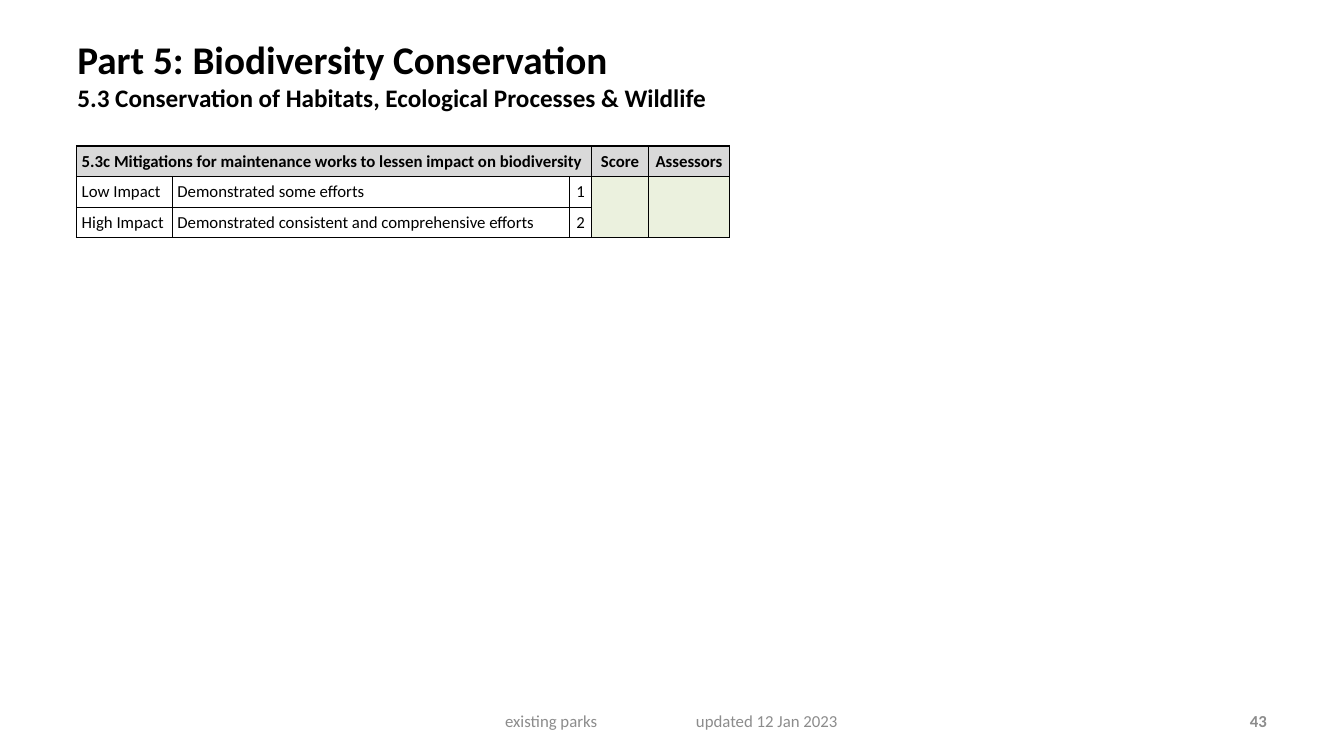
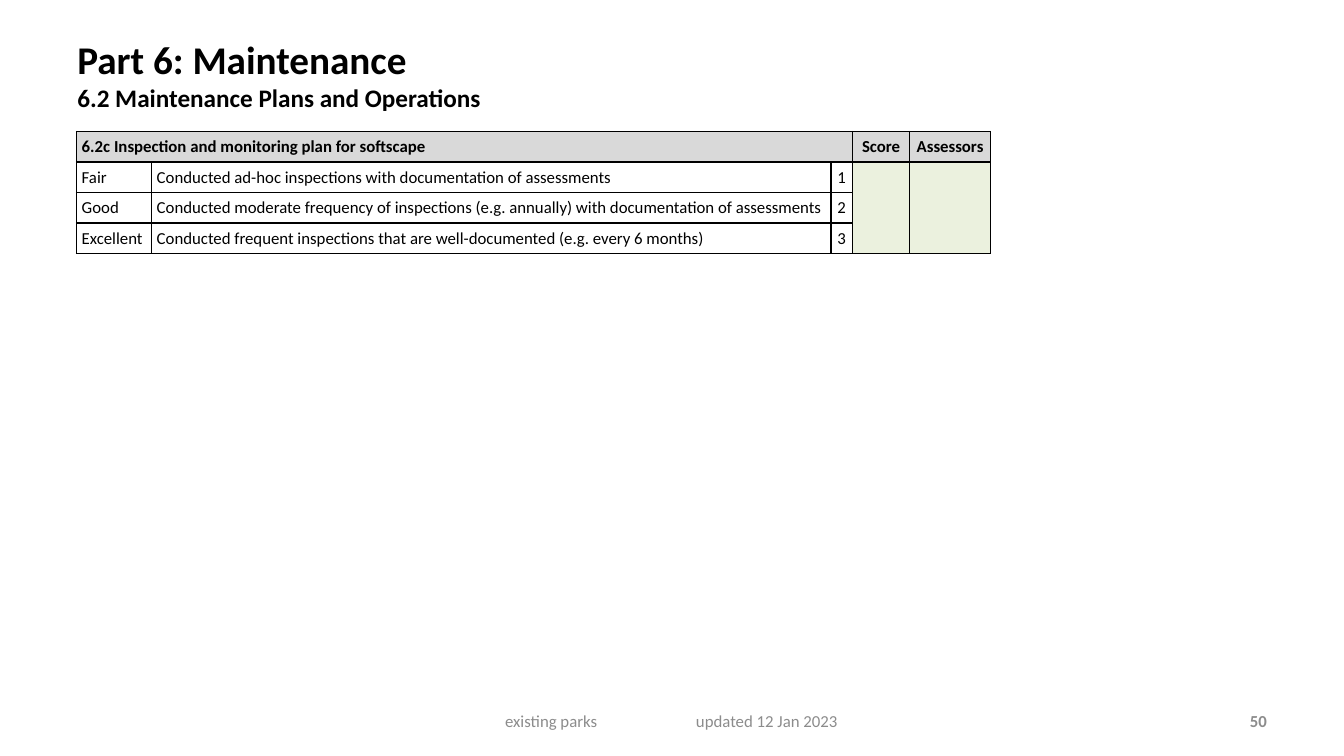
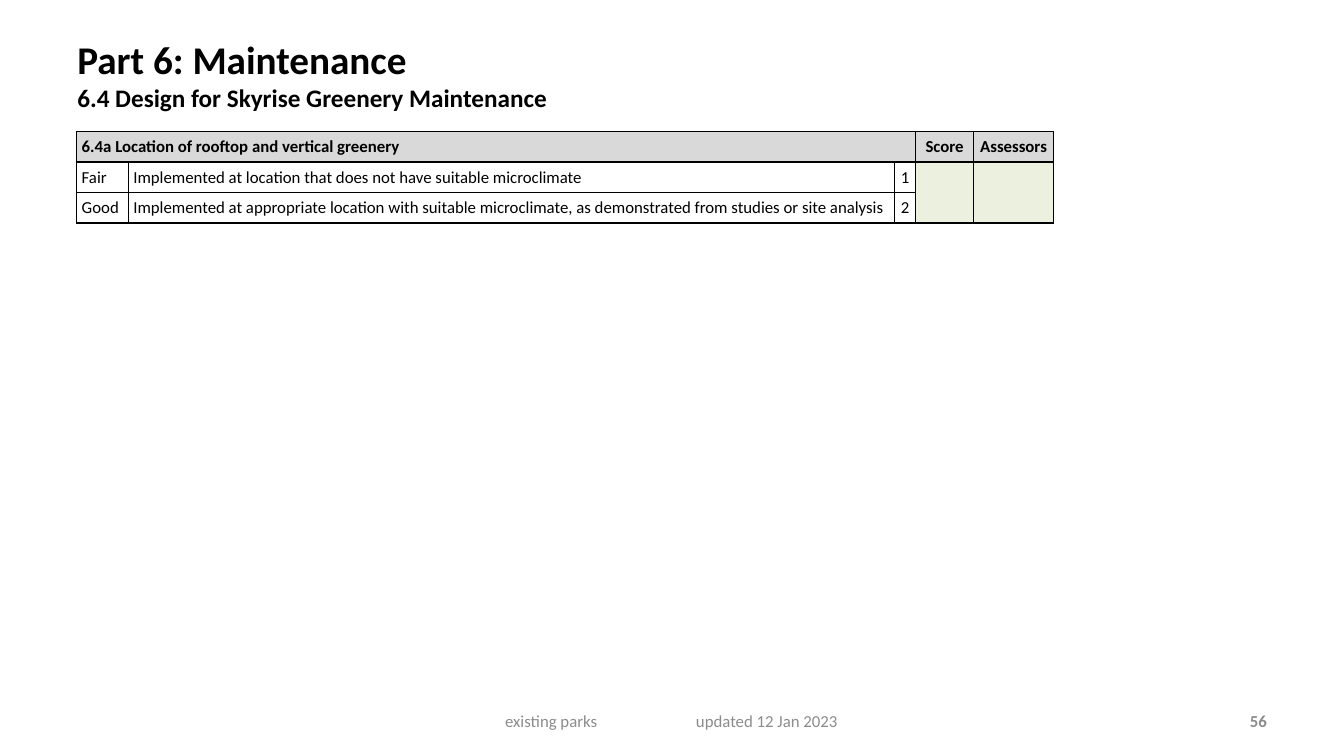
from lxml.etree import SubElement
from pptx import Presentation
from pptx.dml.color import RGBColor
from pptx.enum.text import MSO_ANCHOR, PP_ALIGN
from pptx.oxml import parse_xml
from pptx.oxml.ns import nsdecls, qn
from pptx.util import Cm, Pt

# Content: title, subtitle, page, table top, first two column widths, heading, levels
SLIDES = [
    dict(title="Part 5: Biodiversity Conservation",
         sub="5.3 Conservation of Habitats, Ecological Processes & Wildlife",
         page="43", top=3.68, cols=(2.41, 10.02),
         head="5.3c Mitigations for maintenance works to lessen impact on biodiversity",
         rows=[("Low Impact", "Demonstrated some efforts"),
               ("High Impact", "Demonstrated consistent and comprehensive efforts")]),
    dict(title="Part 6: Maintenance",
         sub="6.2 Maintenance Plans and Operations",
         page="50", top=3.31, cols=(1.89, 17.12),
         head="6.2c Inspection and monitoring plan for softscape",
         rows=[("Fair", "Conducted ad-hoc inspections with documentation of assessments"),
               ("Good", "Conducted moderate frequency of inspections (e.g. annually) "
                        "with documentation of assessments"),
               ("Excellent", "Conducted frequent inspections that are well-documented "
                             "(e.g. every 6 months)")]),
    dict(title="Part 6: Maintenance",
         sub="6.4 Design for Skyrise Greenery Maintenance",
         page="56", top=3.31, cols=(1.3, 19.31),
         head="6.4a Location of rooftop and vertical greenery",
         rows=[("Fair", "Implemented at location that does not have suitable microclimate"),
               ("Good", "Implemented at appropriate location with suitable microclimate, "
                        "as demonstrated from studies or site analysis")]),
]
FOOTER = "existing parks\tupdated 12 Jan 2023"

# Shared style
COLORS = dict(text="000000", foot="8C8C8C", head="D9D9D9", entry="EBF1DE")
FONT = "Calibri"
LEFT, ROW, PAD = 1.93, 0.77, 0.13
SCORES = (0.54, 1.45, 2.03)
FOOT_TOP, FOOT_HIGH = 17.65, 1.02


def write(para, text, size=12, bold=False, color="text", align=PP_ALIGN.LEFT, tab=None):
    """Put formatted text in a paragraph."""
    para.alignment = align
    if tab:
        tabs = SubElement(para._p.get_or_add_pPr(), qn("a:tabLst"))
        SubElement(tabs, qn("a:tab"), pos=str(Cm(tab)), algn="l")
    if not text:
        SubElement(para._p, qn("a:endParaRPr"), sz=str(size * 100))
        return
    run = para.add_run()
    run.text = text
    run.font.name, run.font.size, run.font.bold = FONT, Pt(size), bold
    run.font.color.rgb = RGBColor.from_string(COLORS[color])


def add_box(slide, left, top, width, height, anchor=MSO_ANCHOR.MIDDLE):
    frame = slide.shapes.add_textbox(Cm(left), Cm(top), Cm(width), Cm(height)).text_frame
    frame.word_wrap = True
    frame.vertical_anchor = anchor
    return frame


def fill_cell(cell, text="", fill=None, **form):
    """Give a cell its borders, fill, margins and text."""
    props = cell._tc.get_or_add_tcPr()
    for side in "LRTB":
        props.append(parse_xml(
            f'<a:ln{side} {nsdecls("a")} w="{Pt(1)}"><a:solidFill>'
            f'<a:srgbClr val="{COLORS["text"]}"/></a:solidFill></a:ln{side}>'))
    if fill:
        cell.fill.solid()
        cell.fill.fore_color.rgb = RGBColor.from_string(COLORS[fill])
    else:
        cell.fill.background()
    cell.margin_left = cell.margin_right = Cm(PAD)
    cell.margin_top = cell.margin_bottom = Cm(PAD)
    cell.vertical_anchor = MSO_ANCHOR.MIDDLE
    write(cell.text_frame.paragraphs[0], text, **form)


def add_rubric(slide, data):
    """Table of levels with cells for the scores."""
    widths = data["cols"] + SCORES
    count = len(data["rows"]) + 1
    table = slide.shapes.add_table(count, len(widths), Cm(LEFT), Cm(data["top"]),
                                   Cm(sum(widths)), Cm(ROW * count)).table
    table.horz_banding = False
    for col, width in zip(table.columns, widths):
        col.width = Cm(width)
    for row in table.rows:
        row.height = Cm(ROW)

    grid = [(data["head"], "", "", "Score", "Assessors")]
    grid += [(*level, str(mark), "", "") for mark, level in enumerate(data["rows"], 1)]
    for r, line in enumerate(grid):
        for c, text in enumerate(line):
            fill = "head" if r == 0 else "entry" if c > 2 else None
            fill_cell(table.cell(r, c), text, fill, bold=r == 0,
                      align=PP_ALIGN.CENTER if c > 1 else PP_ALIGN.LEFT)
    table.cell(0, 0).merge(table.cell(0, 2))
    for c in (3, 4):
        table.cell(1, c).merge(table.cell(count - 1, c))


def add_slide(deck, data):
    slide = deck.slides.add_slide(deck.slide_layouts[6])
    # Title
    frame = add_box(slide, 1.7, 0.76, 26.31, 2.51, MSO_ANCHOR.TOP)
    write(frame.paragraphs[0], data["title"], size=28, bold=True)
    write(frame.add_paragraph(), data["sub"], size=18, bold=True)
    add_rubric(slide, data)
    # Footer and page number
    frame = add_box(slide, 12.48, FOOT_TOP, 9.92, FOOT_HIGH)
    write(frame.paragraphs[0], FOOTER, color="foot", tab=4.81)
    frame = add_box(slide, 24.28, FOOT_TOP, 7.9, FOOT_HIGH)
    write(frame.paragraphs[0], data["page"], bold=True, color="foot", align=PP_ALIGN.RIGHT)


def main():
    deck = Presentation()
    deck.slide_width, deck.slide_height = Cm(33.87), Cm(19.05)
    for data in SLIDES:
        add_slide(deck, data)
    deck.save("out.pptx")


if __name__ == "__main__":
    main()
